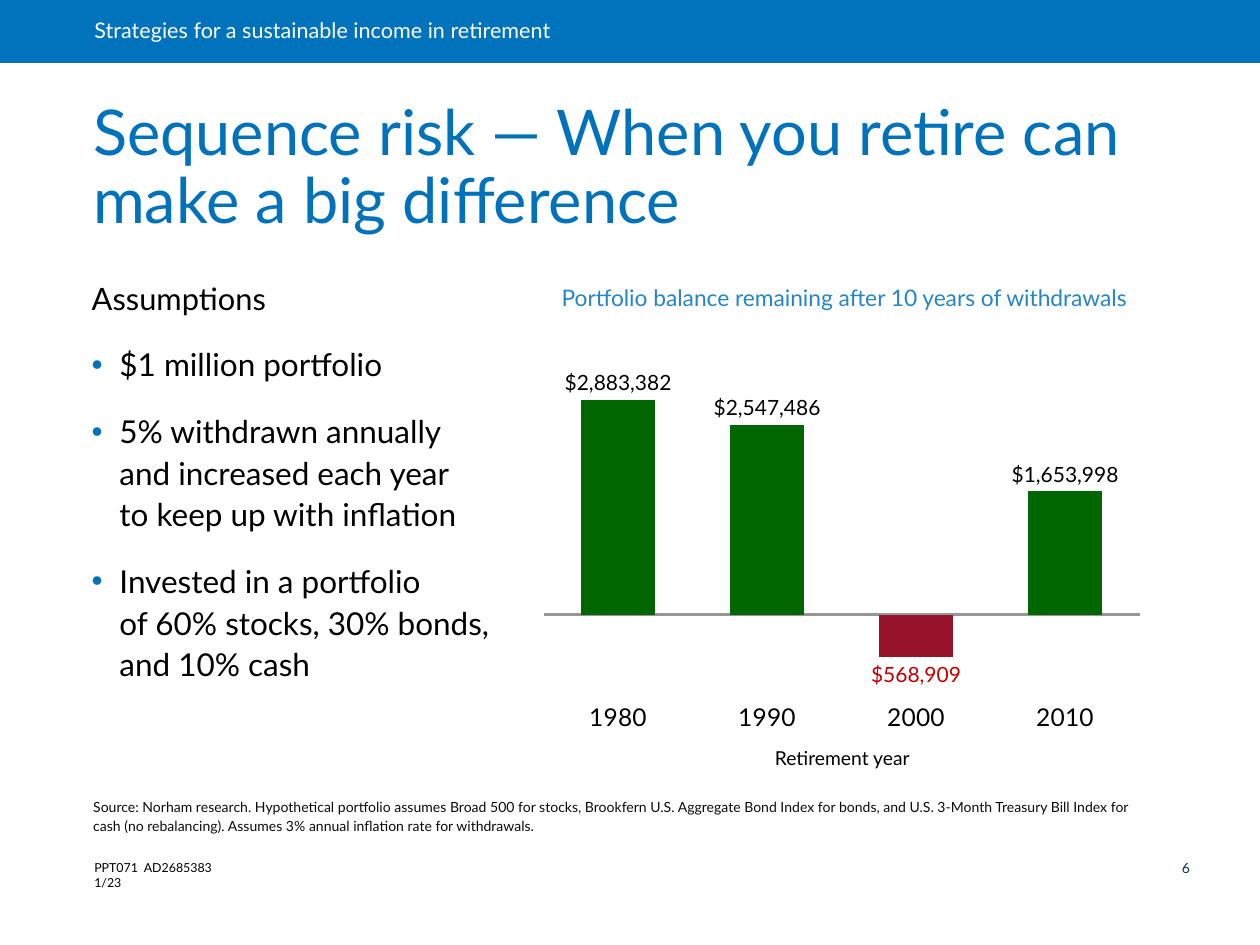
"""Build the sequence risk slide with its assumptions and balance chart."""
from lxml.etree import SubElement
from pptx import Presentation
from pptx.chart.data import CategoryChartData
from pptx.dml.color import RGBColor
from pptx.enum.chart import XL_CHART_TYPE, XL_LABEL_POSITION, XL_TICK_LABEL_POSITION, XL_TICK_MARK
from pptx.enum.shapes import MSO_SHAPE
from pptx.enum.text import MSO_ANCHOR, PP_ALIGN
from pptx.oxml import parse_xml
from pptx.oxml.ns import nsdecls, qn
from pptx.util import Inches, Pt

FONT = "Lato"
COLORS = {
    "band": "0073BC", "title": "0072BC", "caption": "2586C6", "page": "003463",
    "note": "0C0C0C", "text": "000000", "white": "FFFFFF", "axis": "969696",
    "gain": "006600", "loss": "96132B", "debt": "C00000",
}
BAND = "Strategies for a sustainable income in retirement"
TITLE = "Sequence risk — When you retire can make a big difference"
HEAD = "Assumptions"
POINTS = [
    "$1 million portfolio",
    "5% withdrawn annually\vand increased each year\vto keep up with inflation",
    "Invested in a portfolio\vof 60% stocks, 30% bonds,\vand 10% cash",
]
CAPTION = "Portfolio balance remaining after 10 years of withdrawals"
AXIS = "Retirement year"
NOTE = (
    "Source: Norham research. Hypothetical portfolio assumes Broad 500 for stocks, "
    "Brookfern U.S. Aggregate Bond Index for bonds, and U.S. 3-Month Treasury Bill "
    "Index for cash (no rebalancing). Assumes 3% annual inflation rate for withdrawals."
)
CODE = "PPT071  AD2685383\v1/23"
YEARS = ["1980", "1990", "2000", "2010"]
SERIES = [
    ("Series 1", [2883382, 2547486, None, 1653998], "gain", "text"),
    ("Series 2", [None, None, -568909, None], "loss", "debt"),
]
PLOT = {"x": 0.027, "y": 0.073, "w": 0.946, "h": 0.811}
MONEY = '"$"#,##0;"$"#,##0'


def rgb(name):
    return RGBColor.from_string(COLORS[name])


def style(font, size, color):
    font.name, font.size, font.bold = FONT, Pt(size), False
    font.color.rgb = rgb(color)


def write(shape, lines, size, color, pads=(0.1, 0.05, 0.1, 0.05), lead=1.0,
          anchor=MSO_ANCHOR.TOP, align=PP_ALIGN.LEFT, wrap=True):
    frame = shape.text_frame
    frame.word_wrap, frame.vertical_anchor = wrap, anchor
    (frame.margin_left, frame.margin_top,
     frame.margin_right, frame.margin_bottom) = map(Inches, pads)
    frame.text = "\n".join(lines)
    for para in frame.paragraphs:
        para.alignment, para.line_spacing = align, lead
        for run in para.runs:
            style(run.font, size, color)
    return frame.paragraphs


def label(slide, box, text, size, color, **look):
    return write(slide.shapes.add_textbox(*map(Inches, box)), [text], size, color, **look)


def bullet(para):
    props = para._p.get_or_add_pPr()
    props.set("marL", str(Inches(0.22)))
    props.set("indent", str(-Inches(0.22)))
    tint = SubElement(props, qn("a:buClr"))
    SubElement(tint, qn("a:srgbClr")).set("val", COLORS["title"])
    SubElement(props, qn("a:buFont")).set("typeface", "Arial")
    SubElement(props, qn("a:buChar")).set("char", "•")
    para.space_before = Pt(14.4)


def place(chart):
    area = chart._chartSpace.chart.plotArea
    for old in area.findall(qn("c:layout")):
        area.remove(old)
    sizes = "".join(f'<c:{key} val="{val}"/>' for key, val in PLOT.items())
    area.insert(0, parse_xml(
        f'<c:layout {nsdecls("c")}><c:manualLayout><c:layoutTarget val="inner"/>'
        f'<c:xMode val="edge"/><c:yMode val="edge"/>{sizes}</c:manualLayout></c:layout>'))


def graph(slide):
    data = CategoryChartData()
    data.categories = YEARS
    for name, vals, *_ in SERIES:
        data.add_series(name, vals)
    box = map(Inches, (4.18, 2.57, 5, 3.28))
    chart = slide.shapes.add_chart(XL_CHART_TYPE.COLUMN_CLUSTERED, *box, data).chart
    chart.has_legend = chart.has_title = False
    style(chart.font, 10, "page")
    place(chart)
    base, scale = chart.category_axis, chart.value_axis
    base.tick_label_position = XL_TICK_LABEL_POSITION.LOW
    base.major_tick_mark = XL_TICK_MARK.NONE
    style(base.tick_labels.font, 14, "text")
    base.format.line.color.rgb = rgb("axis")
    base.format.line.width = Pt(2.25)
    scale.visible = scale.has_major_gridlines = False
    scale.minimum_scale, scale.maximum_scale = -1000000, 3500000
    plot = chart.plots[0]
    plot.gap_width = plot.overlap = 100
    plot.vary_by_categories = False
    for series, (_, _, fill, ink) in zip(plot.series, SERIES):
        series.invert_if_negative = False
        series.format.fill.solid()
        series.format.fill.fore_color.rgb = rgb(fill)
        tags = series.data_labels
        tags.show_value = True
        tags.position = XL_LABEL_POSITION.OUTSIDE_END
        tags.number_format, tags.number_format_is_linked = MONEY, False
        style(tags.font, 12, ink)


def main():
    deck = Presentation()
    deck.slide_width, deck.slide_height = Inches(10), Inches(7.5)
    slide = deck.slides.add_slide(deck.slide_layouts[6])
    band = slide.shapes.add_shape(MSO_SHAPE.RECTANGLE, 0, 0, Inches(10), Inches(0.5))
    band.shadow.inherit = False
    band.fill.solid()
    band.fill.fore_color.rgb = rgb("band")
    band.line.fill.background()
    write(band, [BAND], 12.3, "white", (0.75, 0, 0.22, 0), 0.9, MSO_ANCHOR.MIDDLE)

    low = {"pads": (0.11, 0.06, 0.11, 0.06), "anchor": MSO_ANCHOR.BOTTOM}
    label(slide, (0.63, 1.64, 8.62, 0.3), TITLE, 36, "title", lead=0.9, **low)
    label(slide, (0.63, 6.46, 8.62, 0.22), NOTE, 8, "note", lead=1.1, **low)
    graph(slide)
    label(slide, (4.27, 5.87, 4.83, 0.29), AXIS, 11, "text", align=PP_ALIGN.CENTER)
    label(slide, (4.36, 2.2, 4.74, 0.32), CAPTION, 13, "caption")
    label(slide, (0.65, 6.78, 1.22, 0.22), CODE, 7.1, "text", wrap=False)
    label(slide, (9.25, 6.8, 0.5, 0.21), "6", 8, "page",
          pads=(0.13, 0.04, 0.04, 0.04), lead=0.9)

    notes = slide.shapes.add_textbox(*map(Inches, (0.63, 2.14, 3.47, 4.15)))
    head, *points = write(notes, [HEAD, *POINTS], 18, "text", lead=1.1)
    head.runs[0].font.size = Pt(17.6)
    for para in points:
        bullet(para)
    deck.save("out.pptx")


if __name__ == "__main__":
    main()
